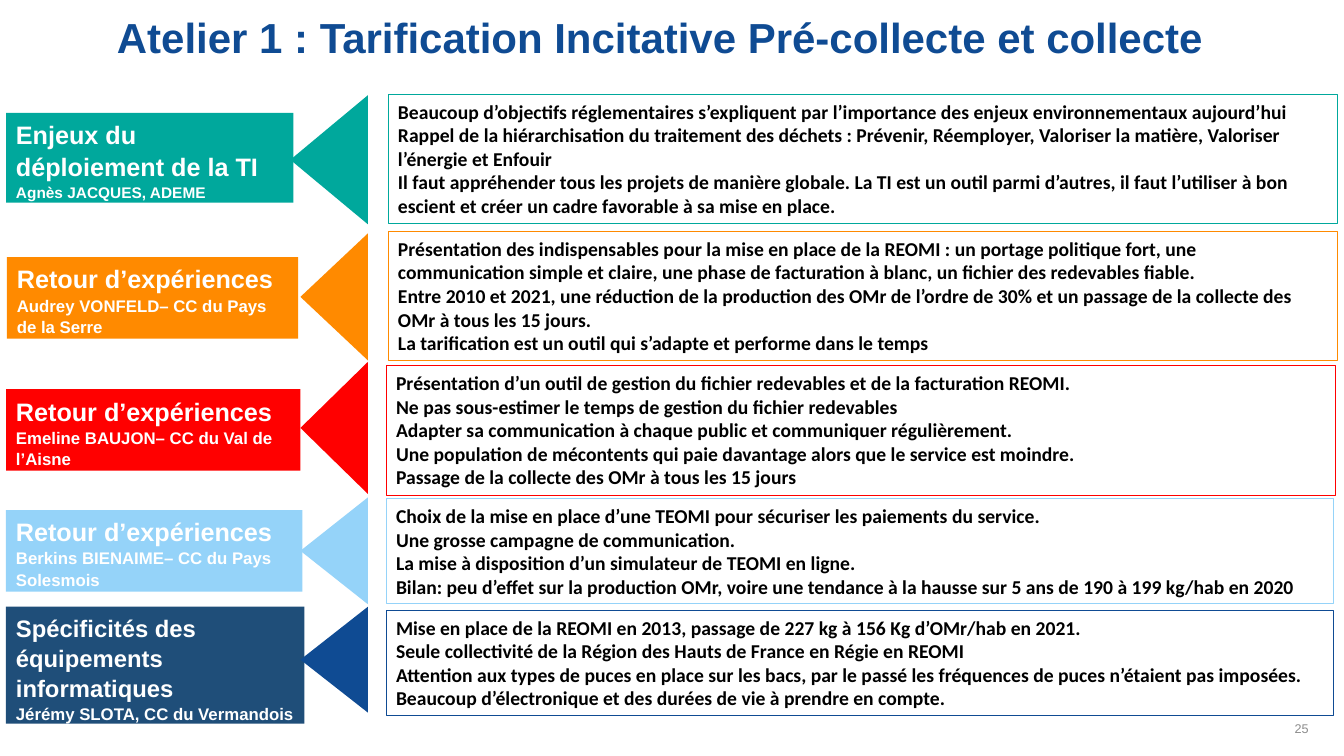
from pptx import Presentation
from pptx.dml.color import RGBColor
from pptx.enum.shapes import MSO_SHAPE as Shape
from pptx.enum.text import MSO_ANCHOR as Anchor, MSO_AUTO_SIZE as AutoSize, PP_ALIGN as Align
from pptx.util import Pt

# Content: one entry per talk
TITLE = "Atelier 1 : Tarification Incitative Pré-collecte et collecte"
PAGE_NUMBER = "25"
TALKS = [
    dict(
        heading="Enjeux du déploiement de la TI", speaker="Agnès JACQUES, ADEME",
        heading_size=18, speaker_size=11, speaker_below=True,
        color="00A89C", arrow_color="00A89C",
        label=(4.3, 80.6, 205.2, 64.1), arrow=(68, 55.4, 92.2),
        summary=(277.2, 67.7, 678.2, 92.2),
        points=[
            "Beaucoup d’objectifs réglementaires s’expliquent par l’importance des enjeux environnementaux aujourd’hui",
            "Rappel de la hiérarchisation du traitement des déchets : Prévenir, Réemployer, Valoriser la matière, Valoriser l’énergie et Enfouir",
            "Il faut appréhender tous les projets de manière globale. La TI est un outil parmi d’autres, il faut l’utiliser à bon escient et créer un cadre favorable à sa mise en place.",
        ]),
    dict(
        heading="Retour d’expériences ", speaker="Audrey VONFELD– CC du Pays de la Serre",
        heading_size=18, speaker_size=12, speaker_below=False,
        color="FF8A00", arrow_color="FF8A00",
        label=(5, 183.6, 208, 58.3), arrow=(166.7, 48.2, 90.7),
        summary=(277.2, 165.6, 678.2, 92.2),
        points=[
            "Présentation des indispensables pour la mise en place de la REOMI : un portage politique fort, une communication simple et claire, une phase de facturation à blanc, un fichier des redevables fiable.",
            "Entre 2010 et 2021, une réduction de la production des OMr de l’ordre de 30% et un passage de la collecte des OMr à tous les 15 jours.",
            "La tarification est un outil qui s’adapte et performe dans le temps",
        ]),
    dict(
        heading="Retour d’expériences ", speaker="Emeline BAUJON– CC du Val de l’Aisne",
        heading_size=18, speaker_size=12, speaker_below=False,
        color="FF0000", arrow_color="FF0000",
        label=(4.3, 277.9, 210.2, 58.3), arrow=(258.5, 48.2, 94.3),
        summary=(275.8, 261.4, 678.2, 92.2),
        points=[
            "Présentation d’un outil de gestion du fichier redevables et de la facturation REOMI.",
            "Ne pas sous-estimer le temps de gestion du fichier redevables",
            "Adapter sa communication à chaque public et communiquer régulièrement.",
            "Une population de mécontents qui paie davantage alors que le service est moindre.",
            "Passage de la collecte des OMr à tous les 15 jours",
        ]),
    dict(
        heading="Retour d’expériences ", speaker="Berkins BIENAIME– CC du Pays Solesmois",
        heading_size=18, speaker_size=12, speaker_below=False,
        color="95D3F9", arrow_color="95D3F9",
        label=(4.3, 364.3, 211.7, 58.3), arrow=(355.3, 48.2, 76.3),
        summary=(275.8, 356.4, 676.8, 74.9),
        points=[
            "Choix de la mise en place d’une TEOMI pour sécuriser les paiements du service.",
            "Une grosse campagne de communication.",
            "La mise à disposition d’un simulateur de TEOMI en ligne.",
            "Bilan: peu d’effet sur la production OMr, voire une tendance à la hausse sur 5 ans de 190 à 199 kg/hab en 2020",
        ]),
    dict(
        heading="Spécificités des équipements informatiques", speaker="Jérémy SLOTA, CC du Vermandois",
        heading_size=17, speaker_size=12, speaker_below=True,
        color="1F4E79", arrow_color="0F4B93",
        label=(4.3, 433.4, 213.1, 83.5), arrow=(433.4, 48.2, 75.6),
        summary=(275.8, 436.3, 676.8, 74.9),
        points=[
            "Mise en place de la REOMI en 2013, passage de 227 kg à 156 Kg d’OMr/hab en 2021.",
            "Seule collectivité de la Région des Hauts de France en Régie en REOMI",
            "Attention aux types de puces en place sur les bacs, par le passé les fréquences de puces n’étaient pas imposées.",
            "Beaucoup d’électronique et des durées de vie à prendre en compte.",
        ]),
]

# Theme
THEME = dict(
    title=dict(name="Arial", size=30, bold=True, color="0F4B93"),
    label=dict(name="Arial", bold=True, color="FFFFFF"),
    summary=dict(name="Calibri", size=14, bold=True, color="000000"),
    number=dict(name="Arial", size=9, color="8C8C8C"),
    line_width=0.75, label_spacing=1.06,
)
ARROW_RIGHT = 262.8  # every arrow has its base on this line


def points(*lengths):
    return [Pt(length) for length in lengths]


def add_text(para, text, style, **changes):
    span = para.add_run()
    span.text = text
    for key, value in {**style, **changes}.items():
        if key == "color":
            span.font.color.rgb = RGBColor.from_string(value)
        else:
            setattr(span.font, key, Pt(value) if key == "size" else value)


def format_frame(frame, **values):
    for key, value in {"word_wrap": True, **values}.items():
        setattr(frame, key, value)


def next_para(frame, index):
    para = frame.add_paragraph() if index else frame.paragraphs[0]
    para.alignment = Align.LEFT
    return para


def add_shape(page, kind, frame, fill=None, line=None):
    shape = page.shapes.add_shape(kind, *points(*frame))
    shape.shadow.inherit = False
    if fill:
        shape.fill.solid()
        shape.fill.fore_color.rgb = RGBColor.from_string(fill)
    else:
        shape.fill.background()
    if line:
        shape.line.color.rgb = RGBColor.from_string(line)
        shape.line.width = Pt(THEME["line_width"])
    else:
        shape.line.fill.background()
    return shape


def add_label(page, talk):
    frame = add_shape(page, Shape.RECTANGLE, talk["label"], fill=talk["color"]).text_frame
    format_frame(frame, vertical_anchor=Anchor.TOP, auto_size=AutoSize.SHAPE_TO_FIT_TEXT)
    para = next_para(frame, 0)
    add_text(para, talk["heading"], THEME["label"], size=talk["heading_size"])
    if talk["speaker_below"]:
        para = next_para(frame, 1)
    add_text(para, talk["speaker"], THEME["label"], size=talk["speaker_size"])
    for para in frame.paragraphs:
        para.line_spacing = THEME["label_spacing"]


def add_arrow(page, talk):
    # The triangle is laid out upright about its centre, then turned to point left
    top, depth, height = talk["arrow"]
    left = ARROW_RIGHT - depth / 2 - height / 2
    upright = (left, top + height / 2 - depth / 2, height, depth)
    add_shape(page, Shape.ISOSCELES_TRIANGLE, upright, fill=talk["arrow_color"]).rotation = 270


def add_summary(page, talk):
    box = add_shape(page, Shape.RECTANGLE, talk["summary"], line=talk["arrow_color"])
    format_frame(box.text_frame, vertical_anchor=Anchor.TOP, auto_size=AutoSize.SHAPE_TO_FIT_TEXT)
    for index, point in enumerate(talk["points"]):
        add_text(next_para(box.text_frame, index), point, THEME["summary"])


def main():
    deck = Presentation()
    deck.slide_width, deck.slide_height = points(960, 540)
    page = deck.slides.add_slide(deck.slide_layouts[5])

    # Title
    title = page.shapes.title
    title.left, title.top, title.width, title.height = points(76.3, 6.5, 828, 44.6)
    format_frame(title.text_frame, vertical_anchor=Anchor.MIDDLE, auto_size=AutoSize.NONE)
    para = next_para(title.text_frame, 0)
    para.line_spacing = 0.9
    add_text(para, TITLE, THEME["title"])

    # Talks
    for talk in TALKS:
        add_label(page, talk)
        add_arrow(page, talk)
        add_summary(page, talk)

    # Page number
    number = page.shapes.add_textbox(*points(725.8, 511.2, 216, 18))
    format_frame(number.text_frame, vertical_anchor=Anchor.BOTTOM)
    para = next_para(number.text_frame, 0)
    para.alignment = Align.RIGHT
    add_text(para, PAGE_NUMBER, THEME["number"])

    deck.save("out.pptx")


if __name__ == "__main__":
    main()
